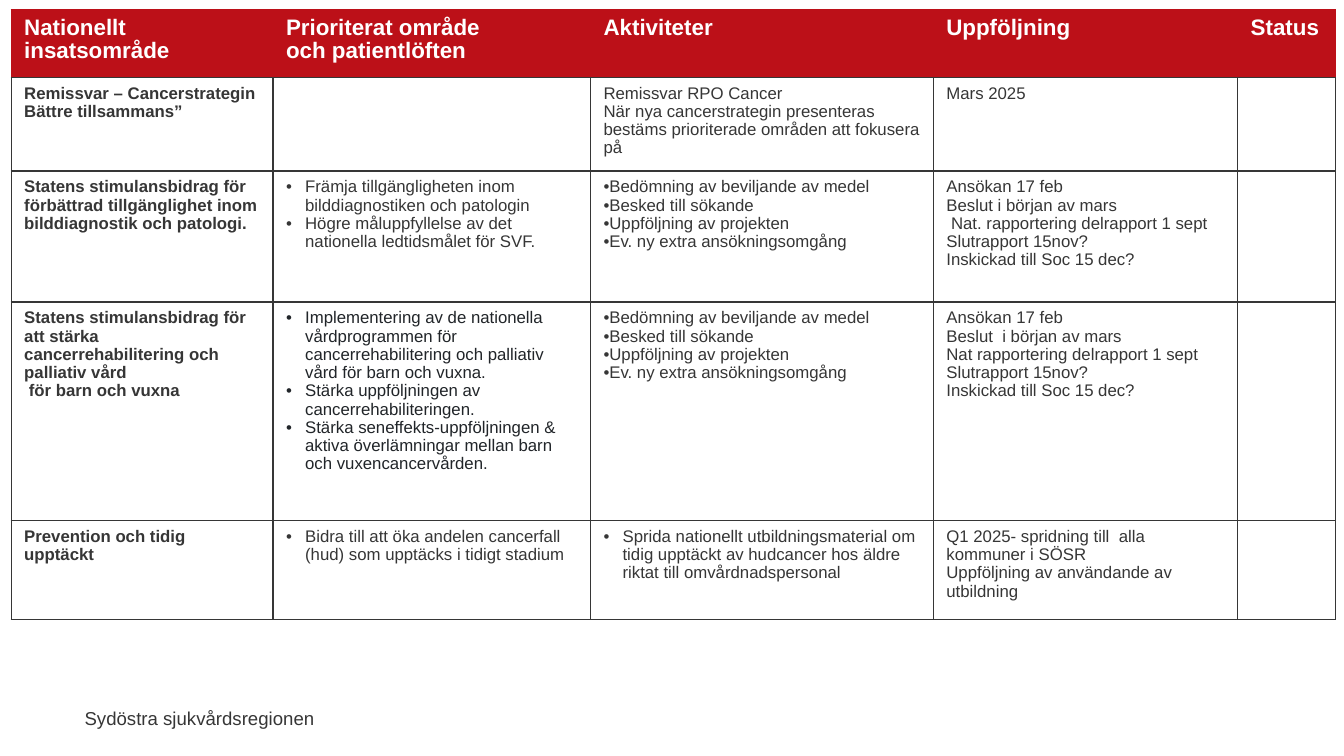
from dataclasses import dataclass
from typing import Optional

from lxml import etree
from pptx import Presentation
from pptx.dml.color import RGBColor
from pptx.enum.text import MSO_AUTO_SIZE, PP_ALIGN
from pptx.oxml.ns import qn
from pptx.util import Cm, Pt

RIGHT = PP_ALIGN.RIGHT
NO_AUTO_SIZE = MSO_AUTO_SIZE.NONE
FONT = "Arial"
COLORS = {
    "red": "BC1018",
    "white": "FFFFFF",
    "text": "363636",
    "dark": "212529",
}
HANGING = Cm(0.48)


@dataclass(frozen=True)
class Entry:
    """Content of one table cell, one string per paragraph."""
    lines: tuple = ()
    bold: bool = False
    size: float = 12
    color: str = "text"
    bullet_margin: Optional[int] = None
    spacing: float = 0.97


def header(text: str) -> Entry:
    return Entry((text,), bold=True, size=16, color="white", spacing=0.93)


def area(*lines: str) -> Entry:
    return Entry(lines, bold=True)


def plain(*lines: str) -> Entry:
    return Entry(lines)


def bullets(*lines: str, margin: int = HANGING, color: str = "text") -> Entry:
    return Entry(lines, color=color, bullet_margin=margin)


# Table content
GRANT_ACTIVITIES = bullets(
    "Bedömning av beviljande av medel",
    "Besked till sökande",
    "Uppföljning av projekten",
    "Ev. ny extra ansökningsomgång",
    margin=0,
)
EMPTY = Entry()
COLUMN_WIDTHS = (6.6, 8.0, 8.64, 7.67, 2.46)
ROW_HEIGHTS = (1.7, 2.36, 3.3, 5.51, 2.5)
ROWS = (
    tuple(header(text) for text in (
        "Nationellt insatsområde", "Prioriterat område \noch patientlöften",
        "Aktiviteter", "Uppföljning", "Status",
    )),
    (
        area("Remissvar – Cancerstrategin Bättre tillsammans”"),
        EMPTY,
        plain("Remissvar RPO Cancer",
              "När nya cancerstrategin presenteras bestäms prioriterade "
              "områden att fokusera på"),
        plain("Mars 2025"),
        EMPTY,
    ),
    (
        area("Statens stimulansbidrag för",
             "förbättrad tillgänglighet inom bilddiagnostik och patologi."),
        bullets("Främja tillgängligheten inom bilddiagnostiken och patologin",
                "Högre måluppfyllelse av det nationella ledtidsmålet för SVF."),
        GRANT_ACTIVITIES,
        plain("Ansökan 17 feb", "Beslut i början av mars",
              " Nat. rapportering delrapport 1 sept",
              "Slutrapport 15nov?", "Inskickad till Soc 15 dec?"),
        EMPTY,
    ),
    (
        area("Statens stimulansbidrag för",
             "att stärka cancerrehabilitering och palliativ vård",
             " för barn och vuxna"),
        bullets("Implementering av de nationella vårdprogrammen för "
                "cancerrehabilitering och palliativ vård för barn och vuxna.",
                "Stärka uppföljningen av cancerrehabiliteringen.",
                "Stärka seneffekts-uppföljningen & aktiva överlämningar "
                "mellan barn och vuxencancervården.",
                color="dark"),
        GRANT_ACTIVITIES,
        plain("Ansökan 17 feb", "Beslut  i början av mars",
              "Nat rapportering delrapport 1 sept",
              "Slutrapport 15nov?", "Inskickad till Soc 15 dec?"),
        EMPTY,
    ),
    (
        area("Prevention och tidig upptäckt"),
        bullets("Bidra till att öka andelen cancerfall (hud) som upptäcks "
                "i tidigt stadium"),
        bullets("Sprida nationellt utbildningsmaterial om tidig upptäckt av "
                "hudcancer hos äldre riktat till omvårdnadspersonal"),
        plain("Q1 2025- spridning till  alla kommuner i SÖSR",
              "Uppföljning av användande av utbildning"),
        EMPTY,
    ),
)


def add_span(para, text: str, size: float, color: str, bold: bool = False) -> None:
    span = para.add_run()
    span.text = text
    span.font.name = FONT
    span.font.size = Pt(size)
    span.font.bold = bold
    span.font.color.rgb = RGBColor.from_string(COLORS[color])


def add_bullet(para, margin: int) -> None:
    properties = para._p.get_or_add_pPr()
    properties.set("marL", str(margin))
    properties.set("indent", str(-HANGING))
    etree.SubElement(properties, qn("a:buFont"), typeface=FONT)
    etree.SubElement(properties, qn("a:buChar"), char="•")


def set_border(cell, side: str, color: str, width: float) -> None:
    line = etree.SubElement(cell._tc.get_or_add_tcPr(), qn(f"a:ln{side}"),
                            w=str(Pt(width)))
    fill = etree.SubElement(line, qn("a:solidFill"))
    etree.SubElement(fill, qn("a:srgbClr"), val=COLORS[color])


def fill_cell(cell, entry: Entry, is_header: bool) -> None:
    cell.margin_left = cell.margin_right = Cm(0.33)
    cell.margin_top = cell.margin_bottom = Cm(0.18)
    for side in "LRTB":
        if is_header and side != "B":
            set_border(cell, side, "red", 0.75)
        else:
            set_border(cell, side, "text", 1)
    cell.fill.solid()
    background = COLORS["red" if is_header else "white"]
    cell.fill.fore_color.rgb = RGBColor.from_string(background)

    frame = cell.text_frame
    for index, line in enumerate(entry.lines):
        para = frame.add_paragraph() if index else frame.paragraphs[0]
        para.line_spacing = entry.spacing
        if entry.bullet_margin is not None:
            add_bullet(para, entry.bullet_margin)
        for part_index, part in enumerate(line.split("\n")):
            if part_index:
                para.add_line_break()
            add_span(para, part, entry.size, entry.color, entry.bold)


def add_plan_table(page) -> None:
    table = page.shapes.add_table(
        len(ROWS), len(COLUMN_WIDTHS), Cm(0.28), Cm(0.25),
        Cm(sum(COLUMN_WIDTHS)), Cm(sum(ROW_HEIGHTS))).table
    table.horz_banding = False
    for column, width in zip(table.columns, COLUMN_WIDTHS):
        column.width = Cm(width)
    for row_index, (row, height) in enumerate(zip(table.rows, ROW_HEIGHTS)):
        row.height = Cm(height)
        for cell, entry in zip(row.cells, ROWS[row_index]):
            fill_cell(cell, entry, is_header=row_index == 0)


def add_footer(page) -> None:
    box = page.shapes.add_textbox(Cm(1.78), Cm(17.68), Cm(6.4), Cm(0.84))
    frame = box.text_frame
    frame.word_wrap = False
    frame.auto_size = NO_AUTO_SIZE
    para = frame.paragraphs[0]
    para.alignment = RIGHT
    add_span(para, "Sydöstra sjukvårdsregionen", 13.3, "text")


def main() -> None:
    deck = Presentation()
    deck.slide_width, deck.slide_height = Cm(33.87), Cm(19.05)
    page = deck.slides.add_slide(deck.slide_layouts.get_by_name("Blank"))
    add_footer(page)
    add_plan_table(page)
    deck.save("out.pptx")


if __name__ == "__main__":
    main()
